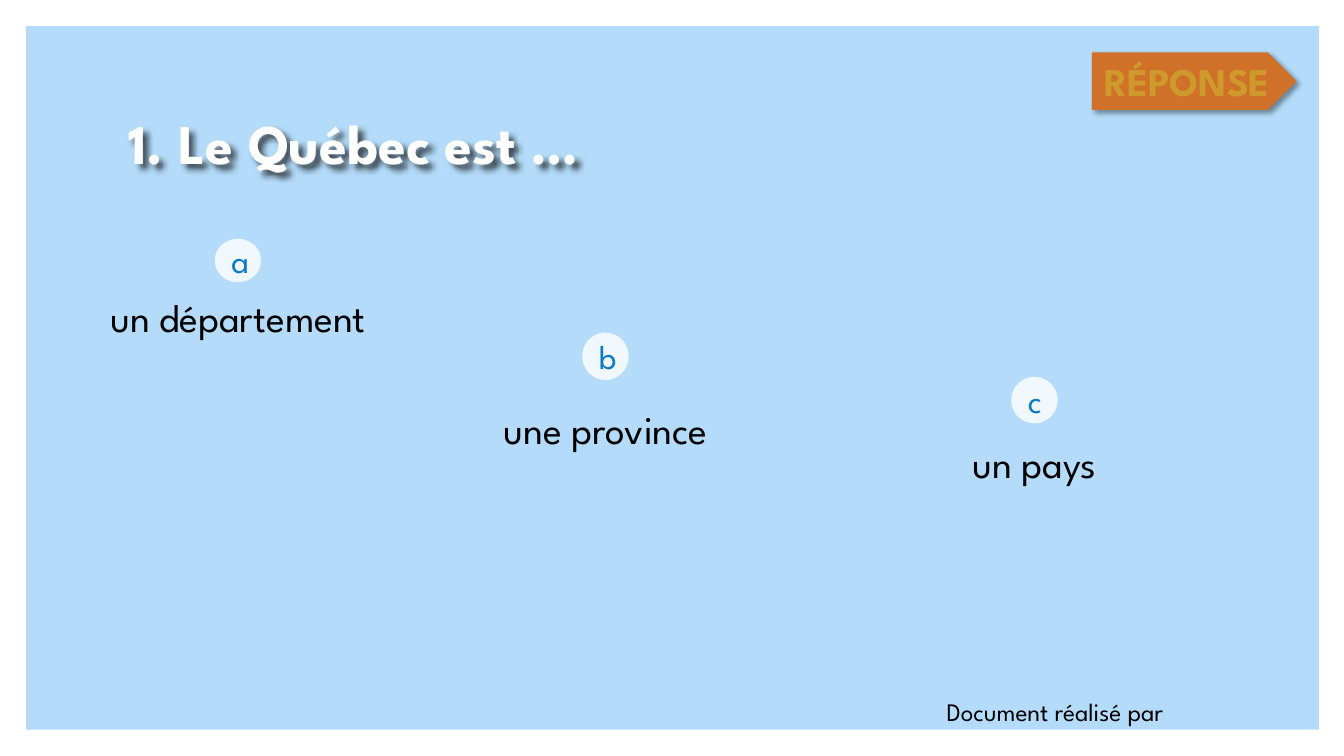
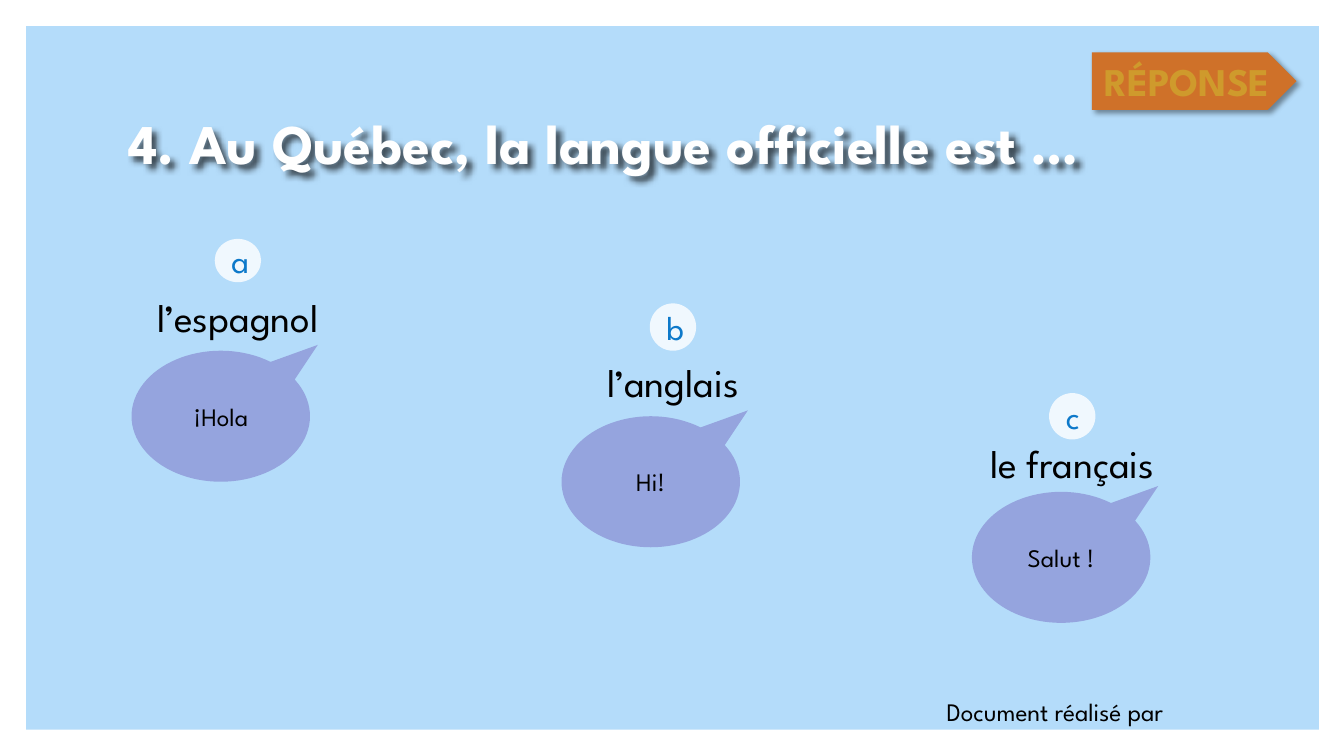
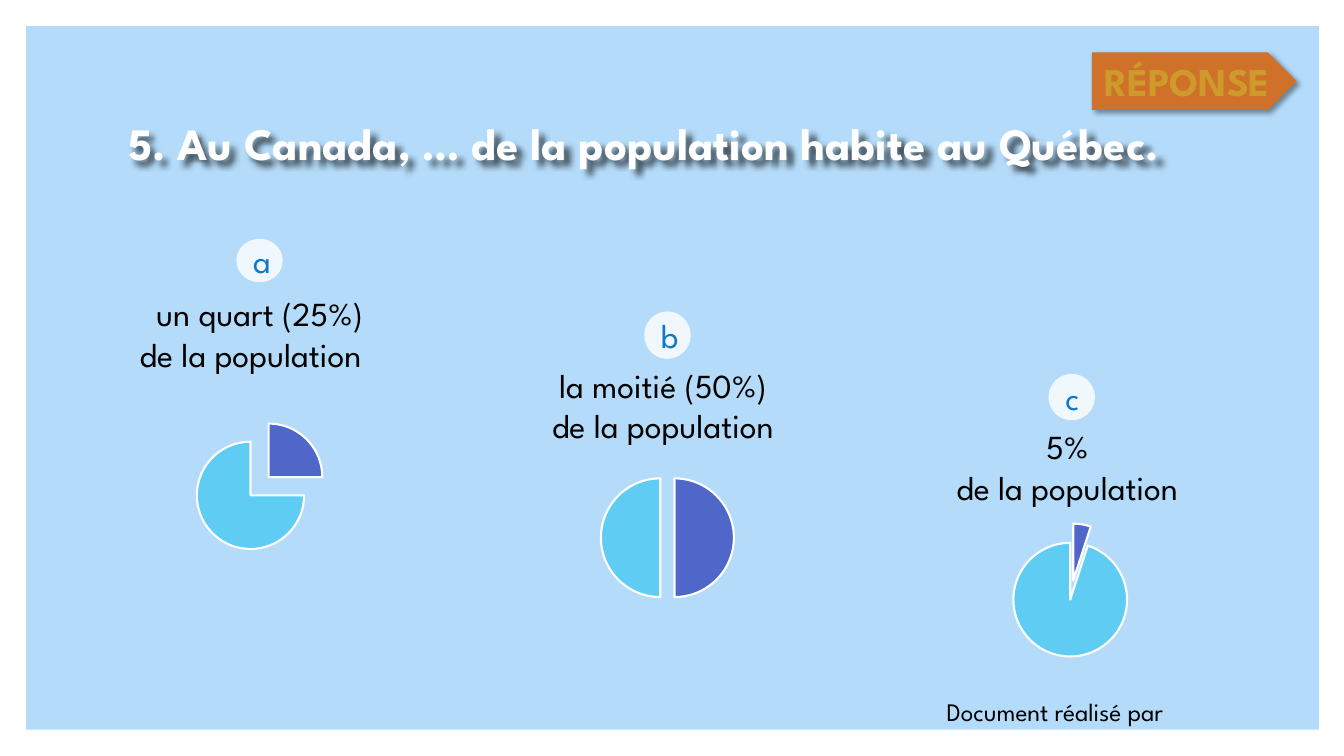
from dataclasses import dataclass

from lxml import etree
from pptx import Presentation
from pptx.chart.data import CategoryChartData
from pptx.dml.color import RGBColor
from pptx.enum.chart import XL_CHART_TYPE
from pptx.enum.shapes import MSO_SHAPE
from pptx.enum.text import MSO_ANCHOR, MSO_AUTO_SIZE, PP_ALIGN
from pptx.oxml.ns import qn
from pptx.util import Inches, Pt

RECTANGLE = MSO_SHAPE.RECTANGLE
OVAL = MSO_SHAPE.OVAL
ARROW_TAG = MSO_SHAPE.PENTAGON
BUBBLE = MSO_SHAPE.OVAL_CALLOUT
PIE = XL_CHART_TYPE.PIE
LEFT, CENTER = PP_ALIGN.LEFT, PP_ALIGN.CENTER
TOP, MIDDLE = MSO_ANCHOR.TOP, MSO_ANCHOR.MIDDLE
FIXED, GROW = MSO_AUTO_SIZE.NONE, MSO_AUTO_SIZE.SHAPE_TO_FIT_TEXT
TITLE_ONLY = 5
CELL = Inches(0.1)
SPACE = 0.9


@dataclass(frozen=True)
class Theme:
    font: str = "League Spartan"
    sky: str = "B4DCFA"
    ink: str = "000000"
    white: str = "FFFFFF"
    badge: str = "F0F8FE"
    letter: str = "0D79CA"
    bubble: str = "95A4DE"
    tag: str = "CF7129"
    tag_text: str = "CF9A2C"
    tag_outline: str = "7030A0"
    slices: tuple = ("4E67C8", "5ECCF3", "A7EA52", "5DCEAF")
    title_size: int = 40
    long_title_size: int = 32
    label_size: int = 28
    letter_size: int = 24
    note_size: int = 18
    chart_size: int = 10


THEME = Theme()


@dataclass(frozen=True)
class Box:
    left: float
    top: float
    width: float
    height: float

    def cells(self):
        return [round(side * CELL) for side in
                (self.left, self.top, self.width, self.height)]

    def centered(self, width, height, drop, shift=0):
        left = self.left + (self.width - width) / 2 + shift
        return Box(left, self.top + drop, width, height)


@dataclass(frozen=True)
class Choice:
    box: Box
    lines: tuple
    lift: float
    extra: object = None
    drop: float = 0
    shift: float = 0
    explosion: int = 0


def assign(target, values):
    for name, value in values.items():
        setattr(target, name, value)


def format_font(font, size, color, bold=False):
    assign(font, {"name": THEME.font, "size": Pt(size), "bold": bold})
    font.color.rgb = RGBColor.from_string(color)


def write(shape, lines, size, color, bold=False, align=CENTER, **frame_format):
    frame = shape.text_frame
    assign(frame, {"word_wrap": True, "auto_size": FIXED,
                   "vertical_anchor": MIDDLE, **frame_format})
    for index, (text, indent) in enumerate(lines):
        para = frame.paragraphs[0] if index == 0 else frame.add_paragraph()
        para.alignment = align
        if indent:
            para._p.get_or_add_pPr().set("marR", str(round(indent * CELL)))
        span = para.add_run()
        span.text = text
        format_font(span.font, size, color, bold)
    return frame


def add_solid(page, kind, box, color):
    shape = page.shapes.add_shape(kind, *box.cells())
    shape.shadow.inherit = False
    shape.fill.solid()
    shape.fill.fore_color.rgb = RGBColor.from_string(color)
    shape.line.fill.background()
    return shape


def add_solid_fill(parent, color):
    fill = etree.SubElement(parent, qn("a:solidFill"))
    return etree.SubElement(fill, qn("a:srgbClr"), val=color)


def cast_shadow(shape, opacity, blur, distance):
    shape.shadow.inherit = False
    effects = shape.element.spPr.find(qn("a:effectLst"))
    shadow = etree.SubElement(
        effects, qn("a:outerShdw"), blurRad=str(Pt(blur)), dist=str(Pt(distance)),
        dir=str(45 * 60000), algn="tl", rotWithShape="0")
    color = etree.SubElement(shadow, qn("a:srgbClr"), val=THEME.ink)
    etree.SubElement(color, qn("a:alpha"), val=str(opacity * 1000))


def furnish_layout(layout, page):
    for holder in list(layout.placeholders):
        if holder.placeholder_format.idx:
            layout.shapes.element.remove(holder.element)
    panel = add_solid(page, RECTANGLE, Box(2.6, 2.6, 128.2, 69.8), THEME.sky)
    credit = page.shapes.add_textbox(*Box(92.9, 68.6, 29.1, 4).cells())
    write(credit, [("Document réalisé par", 0)], THEME.note_size, THEME.ink,
          align=LEFT, vertical_anchor=TOP, auto_size=GROW)
    for place, shape in enumerate((panel, credit), 2):
        layout.shapes.element.insert(place, shape.element)


def add_title(page, text, box, size):
    title = page.shapes.title
    left, top, width, height = box.cells()
    assign(title, {"left": left, "top": top, "width": width, "height": height})
    frame = write(title, [(text, 0)], size, THEME.white, True, LEFT)
    frame.paragraphs[0].line_spacing = 0.9
    cast_shadow(title, 65, 4, 4)


def add_answer_tag(page, box):
    tag = add_solid(page, ARROW_TAG, box, THEME.tag)
    cast_shadow(tag, 40, 4, 3)
    frame = write(tag, [("RÉPONSE", 0)], THEME.label_size, THEME.tag_text, True,
                  vertical_anchor=TOP, word_wrap=False, auto_size=GROW)
    properties = frame.paragraphs[0].runs[0]._r.get_or_add_rPr()
    outline = etree.Element(qn("a:ln"), w=str(Pt(1.75)))
    add_solid_fill(outline, THEME.tag_outline)
    properties.insert(0, outline)


def add_bubble(page, choice):
    box = choice.box.centered(17.7, 13, choice.drop, choice.shift)
    bubble = add_solid(page, BUBBLE, box, THEME.bubble)
    bubble.adjustments[0] = 0.544
    bubble.adjustments[1] = -0.545
    write(bubble, [(choice.extra, 0)], THEME.note_size, THEME.ink)


def add_pie(page, choice):
    data = CategoryChartData()
    data.categories = ["1", "2", "3", "4"]
    data.add_series("Series 1", [choice.extra, 100 - choice.extra, None, None])
    box = choice.box.centered(22.8, 15.9, choice.drop)
    chart = page.shapes.add_chart(PIE, *box.cells(), data).chart
    assign(chart, {"has_title": False, "has_legend": False})
    format_font(chart.font, THEME.chart_size, THEME.ink)
    plot = chart.plots[0]
    plot.vary_by_categories = True
    series = plot.series[0]
    for index, color in enumerate(THEME.slices):
        style = series.points[index].format
        style.fill.solid()
        style.fill.fore_color.rgb = RGBColor.from_string(color)
        style.line.color.rgb = RGBColor.from_string(THEME.white)
        style.line.width = Pt(1.5)
    explosion = etree.Element(qn("c:explosion"), val=str(choice.explosion))
    series._element.find(qn("c:tx")).addnext(explosion)
    area = chart._chartSpace.find(".//" + qn("c:plotArea"))
    for old in area.findall(qn("c:layout")):
        area.remove(old)
    layout = etree.Element(qn("c:layout"))
    manual = etree.SubElement(layout, qn("c:manualLayout"))
    for name, value in {"layoutTarget": "inner", "xMode": "edge", "yMode": "edge",
                        "x": "0.21", "y": "0.085", "w": "0.58", "h": "0.83"}.items():
        etree.SubElement(manual, qn("c:" + name), val=value)
    area.insert(0, layout)


def add_choice(page, letter, badge_height, choice, size, add_extra):
    badge_box = choice.box.centered(4.6, badge_height, -choice.lift)
    badge = add_solid(page, OVAL, badge_box, THEME.badge)
    write(badge, [(letter, 0)], THEME.letter_size, THEME.letter)
    label = page.shapes.add_textbox(*choice.box.cells())
    write(label, choice.lines, size, THEME.ink, vertical_anchor=TOP, auto_size=GROW)
    if add_extra:
        add_extra(page, choice)


def fill_question(page, title, choices, title_width=110, title_size=THEME.title_size,
                  label_size=THEME.label_size, add_extra=None):
    add_title(page, title, Box(11.7, 7, title_width, 15), title_size)
    for letter, height, choice in zip("abc", (4.3, 4.7, 4.6), choices):
        add_choice(page, letter, height, choice, label_size, add_extra)
    add_answer_tag(page, Box(108.3, 5.2, 20.3, 5.7))


QUESTIONS = [
    {"title": "1. Le Québec est …",
     "choices": [
         Choice(Box(7.9, 28.6, 31.4, 10.4), (("un département", 0),), 4.9),
         Choice(Box(47.3, 39.7, 25.5, 10.4), (("une province", 0),), 6.7),
         Choice(Box(94.7, 43.1, 15.8, 10.4), (("un pays", 0),), 5.7)]},
    {"title": "4. Au Québec, la langue officielle est …",
     "add_extra": add_bubble,
     "choices": [
         Choice(Box(7.9, 28.6, 31.4, 5.7), (("l’espagnol", 0),), 4.9,
                "¡Hola", 6.2, -1.7),
         Choice(Box(54, 35.1, 25.5, 5.7), (("l’anglais", 0),), 5,
                "Hi!", 6.2, -2.2),
         Choice(Box(92.1, 43.1, 28.5, 5.7), (("le français", 0),), 4.1,
                "Salut !", 5.7, -1.1)]},
    {"title": "5. Au Canada, … de la population habite au Québec.",
     "title_width": 118.6,
     "title_size": THEME.long_title_size,
     "label_size": THEME.letter_size,
     "add_extra": add_pie,
     "choices": [
         Choice(Box(7.9, 28.6, 35.7, 9.1),
                (("un quart (25%)", 0), ("de la population", 2 * SPACE)), 4.9,
                25, 11.7, explosion=24),
         Choice(Box(48.6, 35.7, 35.2, 9.1),
                (("la moitié (50%)", SPACE), ("de la population", 0)), 4.8,
                50, 9.7, explosion=12),
         Choice(Box(90, 41.8, 32.6, 9.1),
                (("5%", SPACE), ("de la population", 0)), 4.7,
                5, 8.8, explosion=17)]},
]


def main():
    deck = Presentation()
    assign(deck, {"slide_width": Inches(13.33), "slide_height": Inches(7.5)})
    layout = deck.slide_layouts[TITLE_ONLY]
    pages = [deck.slides.add_slide(layout) for question in QUESTIONS]
    furnish_layout(layout, pages[0])
    for page, question in zip(pages, QUESTIONS):
        fill_question(page, **question)
    deck.save("out.pptx")


if __name__ == "__main__":
    main()
